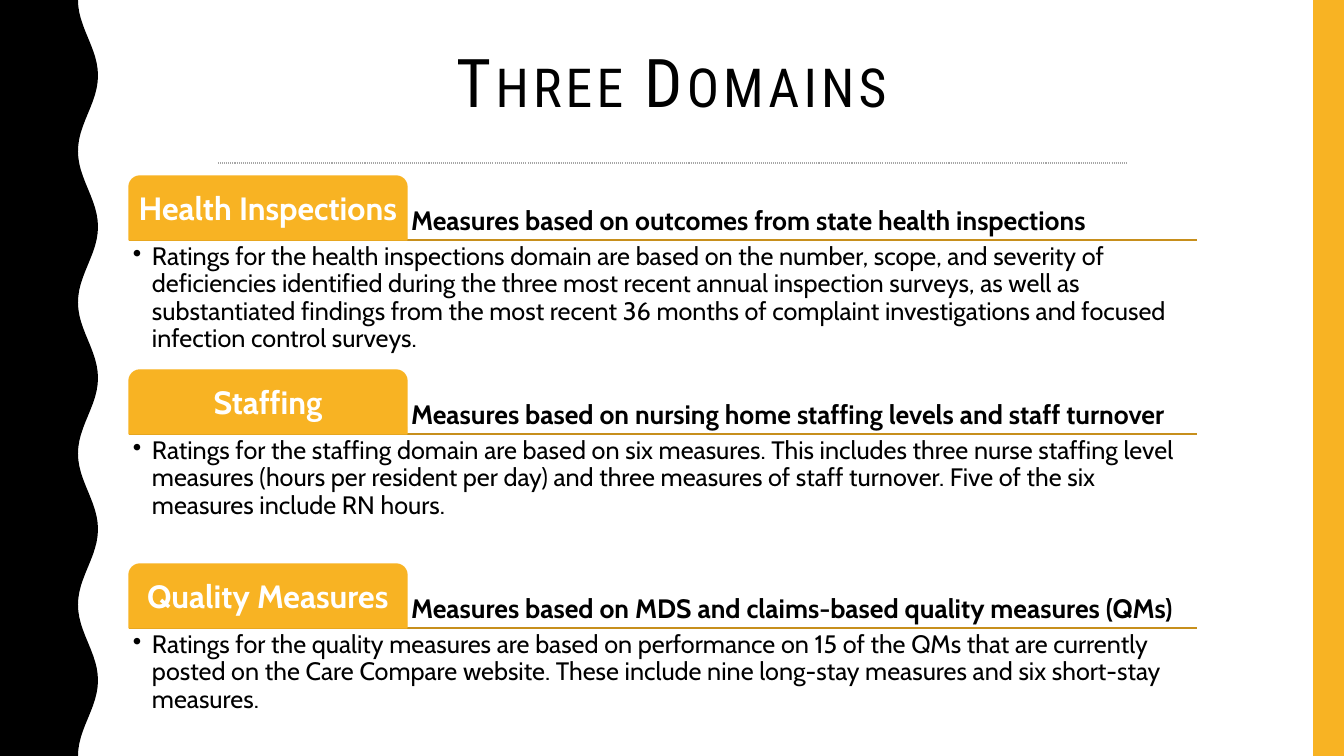
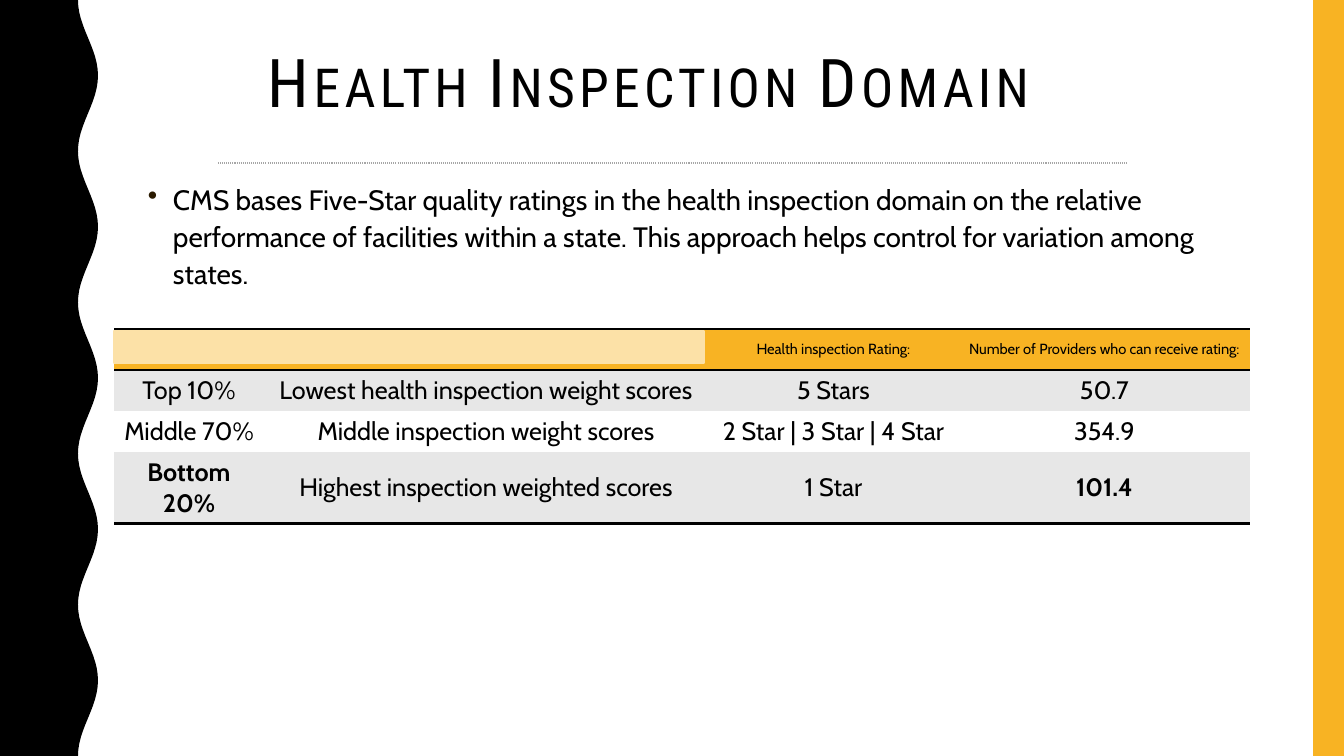
"""Build two slides on the domains behind nursing home star ratings."""
import dataclasses
import math
import typing

import pptx
import pptx.dml.color
import pptx.enum.dml
import pptx.enum.shapes
import pptx.enum.text
import pptx.oxml
import pptx.oxml.ns
import pptx.util

EMU_PER_PX = 63500 / 7
PAGE_WIDTH, PAGE_HEIGHT = 1344, 756
COLORS = {
    "black": "000000",
    "white": "FFFFFF",
    "gold": "F8B323",
    "pale gold": "FCE1A7",
    "dark gold": "C78F1C",
    "bullet": "2A1A00",
    "band": "E7E7E7",
    "dots": "A6A6A6",
}
TITLE_FONT, BODY_FONT = "Roboto Condensed", "Cabin"
PLAIN_TABLE_STYLE = "{2D5ABB26-0587-4C30-8999-92F81FD0307C}"
ALIGN = pptx.enum.text.PP_ALIGN
ANCHOR = pptx.enum.text.MSO_ANCHOR
SHAPE = pptx.enum.shapes.MSO_SHAPE


@dataclasses.dataclass(frozen=True)
class Area:
    """A rectangle in px."""

    left: int
    top: int
    width: int
    height: int

    def emu(self) -> tuple[int, ...]:
        """Return the rectangle in EMU."""
        return tuple(px(side) for side in dataclasses.astuple(self))


@dataclasses.dataclass(frozen=True)
class Style:
    """The look of a paragraph."""

    size: float
    color: str = "black"
    bold: bool = False
    align: typing.Any = ALIGN.LEFT
    spacing: float = 0.9
    font: str = BODY_FONT


@dataclasses.dataclass(frozen=True)
class Domain:
    """One rating domain with its tab, heading and detail."""

    name: str
    heading: str
    detail: str


@dataclasses.dataclass(frozen=True)
class RatingRow:
    """One row of the rating table."""

    cells: tuple[str, ...]
    fill: str
    size: float = 18
    bold_columns: tuple[int, ...] = ()
    borders: tuple[str, ...] = ()


TITLE_STYLE = Style(48, align=ALIGN.CENTER, font=TITLE_FONT)
TAB_STYLE = Style(23, "white", True, ALIGN.CENTER)
HEADING_STYLE = Style(19, bold=True)
DETAIL_STYLE = Style(18)
INTRO_STYLE = Style(20, spacing=1.1)

DOMAINS = (
    Domain(
        "Health Inspections",
        "Measures based on outcomes from state health inspections",
        "Ratings for the health inspections domain are based on the number, scope, and "
        "severity of deficiencies identified during the three most recent annual inspection "
        "surveys, as well as substantiated findings from the most recent 36 months of "
        "complaint investigations and focused infection control surveys.",
    ),
    Domain(
        "Staffing",
        "Measures based on nursing home staffing levels and staff turnover",
        "Ratings for the staffing domain are based on six measures. This includes three nurse "
        "staffing level measures (hours per resident per day) and three measures of staff "
        "turnover. Five of the six measures include RN hours.",
    ),
    Domain(
        "Quality Measures",
        "Measures based on MDS and claims-based quality measures (QMs)",
        "Ratings for the quality measures are based on performance on 15 of the QMs that are "
        "currently posted on the Care Compare website. These include nine long-stay measures "
        "and six short-stay measures.",
    ),
)
INTRO = (
    "CMS bases Five-Star quality ratings in the health inspection domain on the relative "
    "performance of facilities within a state. This approach helps control for variation "
    "among states."
)
RATING_COLUMNS = (150, 444, 251, 291)
RATING_ROW_HEIGHT = 41
RATING_ROWS = (
    RatingRow(
        ("", "", "Health inspection Rating:", "Number of Providers who can receive rating:"),
        "gold", 10.5, borders=("a:lnT", "a:lnB"),
    ),
    RatingRow(("Top 10%", "Lowest health inspection weight scores", "5 Stars", "50.7"), "band"),
    RatingRow(
        ("Middle 70%", "Middle inspection weight scores", "2 Star | 3 Star | 4 Star", "354.9"),
        "white",
    ),
    RatingRow(
        ("Bottom 20%", "Highest inspection weighted scores", "1 Star", "101.4"),
        "band", bold_columns=(0, 3), borders=("a:lnB",),
    ),
)


def px(length: float) -> int:
    """Turn px into EMU."""
    return round(length * EMU_PER_PX)


def rgb(name: str) -> pptx.dml.color.RGBColor:
    """Look up a colour by name."""
    return pptx.dml.color.RGBColor.from_string(COLORS[name])


def add_element(parent: typing.Any, tag: str, **attributes: str) -> typing.Any:
    """Append an XML element and return it."""
    element = pptx.oxml.parse_xml(f"<{tag} {pptx.oxml.ns.nsdecls('a')}/>")
    for key, value in attributes.items():
        element.set(key, value)
    parent.append(element)
    return element


def write(para: typing.Any, text: str, style: Style) -> typing.Any:
    """Add one styled run to a paragraph."""
    para.alignment = style.align
    para.line_spacing = style.spacing
    span = para.add_run()
    span.text = text
    span.font.name = style.font
    span.font.size = pptx.util.Pt(style.size)
    span.font.bold = style.bold
    span.font.color.rgb = rgb(style.color)
    return span


def set_bullet(para: typing.Any, indent: int, color: str) -> None:
    """Give a paragraph a hanging round bullet."""
    properties = para._p.get_or_add_pPr()
    properties.set("marL", str(px(indent)))
    properties.set("indent", str(-px(indent)))
    add_element(add_element(properties, "a:buClr"), "a:srgbClr", val=COLORS[color])
    add_element(properties, "a:buChar", char="•")


def set_frame(frame: typing.Any, anchor: typing.Any, across: int, down: int) -> None:
    """Set wrapping, anchor and insets of a text frame."""
    frame.word_wrap = True
    frame.auto_size = pptx.enum.text.MSO_AUTO_SIZE.NONE
    frame.vertical_anchor = anchor
    frame.margin_left = frame.margin_right = px(across)
    frame.margin_top = frame.margin_bottom = px(down)


def add_text(page: typing.Any, area: Area, text: str, style: Style,
             anchor: typing.Any = ANCHOR.TOP, insets: tuple[int, int] = (4, 4),
             bullet: tuple[int, str] | None = None) -> None:
    """Add a text box with one paragraph."""
    box = page.shapes.add_textbox(*area.emu())
    set_frame(box.text_frame, anchor, *insets)
    para = box.text_frame.paragraphs[0]
    if bullet:
        set_bullet(para, *bullet)
    write(para, text, style)


def paint(shape: typing.Any, fill: str, outline: bool = False) -> None:
    """Fill a shape flat, with an outline of the same colour if wanted."""
    shape.shadow.inherit = False
    shape.fill.solid()
    shape.fill.fore_color.rgb = rgb(fill)
    if outline:
        shape.line.color.rgb = rgb(fill)
        shape.line.width = pptx.util.Pt(1)
    else:
        shape.line.fill.background()


def add_rule(page: typing.Any, left: int, right: int, top: int, color: str,
             width: float, dash: typing.Any = None) -> None:
    """Draw a horizontal line."""
    rule = page.shapes.add_connector(
        pptx.enum.shapes.MSO_CONNECTOR.STRAIGHT, px(left), px(top), px(right), px(top))
    rule.line.color.rgb = rgb(color)
    rule.line.width = pptx.util.Pt(width)
    if dash is not None:
        rule.line.dash_style = dash
    add_element(rule.element.spPr, "a:effectLst")


def add_wave(page: typing.Any) -> None:
    """Draw the black band with a wavy right edge."""
    middle, swing, waves, steps = 88, 10, 5, 120
    edge = [
        (px(middle - swing * math.cos(math.tau * waves * step / steps)),
         px(PAGE_HEIGHT * step / steps))
        for step in range(steps + 1)
    ]
    builder = page.shapes.build_freeform(0, 0)
    builder.add_line_segments([*edge, (0, px(PAGE_HEIGHT))], close=True)
    paint(builder.convert_to_shape(), "black")


def add_page(deck: typing.Any, title: str) -> typing.Any:
    """Add a slide with the shared frame and title."""
    page = deck.slides.add_slide(deck.slide_layouts.get_by_name("Title Only"))
    add_wave(page)
    side = Area(1313, 0, PAGE_WIDTH - 1313, PAGE_HEIGHT)
    paint(page.shapes.add_shape(SHAPE.RECTANGLE, *side.emu()), "gold")
    add_rule(page, 218, 1126, 163, "dots", 0.75, pptx.enum.dml.MSO_LINE.ROUND_DOT)
    box = page.shapes.title
    box.left, box.top, box.width, box.height = Area(138, 19, 1122, 133).emu()
    set_frame(box.text_frame, ANCHOR.MIDDLE, 10, 5)
    span = write(box.text_frame.paragraphs[0], title, TITLE_STYLE)
    properties = span._r.get_or_add_rPr()
    properties.set("cap", "small")
    properties.set("spc", "300")
    return page


def add_domain(page: typing.Any, domain: Domain, top: int) -> None:
    """Draw one domain: rule, heading, tab and detail."""
    left, right, tab_width, tab_height = 129, 1197, 278, 64
    base = top + tab_height
    add_rule(page, left, right, base, "dark gold", 1)
    heading = Area(left + tab_width, top, right - left - tab_width, tab_height)
    add_text(page, heading, domain.heading, HEADING_STYLE, ANCHOR.BOTTOM)
    tab = page.shapes.add_shape(
        SHAPE.ROUND_2_SAME_RECTANGLE, *Area(left, top, tab_width, tab_height).emu())
    tab.adjustments[0], tab.adjustments[1] = 0.17, 0
    paint(tab, "gold", outline=True)
    set_frame(tab.text_frame, ANCHOR.MIDDLE, 5, 5)
    write(tab.text_frame.paragraphs[0], domain.name, TAB_STYLE)
    add_text(page, Area(left, base, right - left, 127), domain.detail, DETAIL_STYLE,
             bullet=(19, "black"))


def add_rating_table(page: typing.Any, left: int, top: int) -> None:
    """Draw the table of ratings."""
    area = Area(left, top, sum(RATING_COLUMNS), RATING_ROW_HEIGHT * len(RATING_ROWS))
    holder = page.shapes.add_table(len(RATING_ROWS), len(RATING_COLUMNS), *area.emu())
    for style_id in holder.element.iter(pptx.oxml.ns.qn("a:tableStyleId")):
        style_id.text = PLAIN_TABLE_STYLE
    table = holder.table
    table.first_row = table.horz_banding = False
    for column, width in zip(table.columns, RATING_COLUMNS):
        column.width = px(width)
    for line, row in zip(table.rows, RATING_ROWS):
        line.height = px(RATING_ROW_HEIGHT)
        for index, (cell, text) in enumerate(zip(line.cells, row.cells)):
            for tag in row.borders:
                border = add_element(cell._tc.get_or_add_tcPr(), tag,
                                     w=str(pptx.util.Pt(2)))
                add_element(add_element(border, "a:solidFill"), "a:srgbClr",
                            val=COLORS["black"])
            cell.fill.solid()
            cell.fill.fore_color.rgb = rgb(row.fill)
            cell.vertical_anchor = ANCHOR.MIDDLE
            if text:
                style = Style(row.size, bold=index in row.bold_columns,
                              align=ALIGN.CENTER, spacing=1.0)
                write(cell.text_frame.paragraphs[0], text, style)


def main() -> None:
    """Build and save the deck."""
    deck = pptx.Presentation()
    deck.slide_width, deck.slide_height = px(PAGE_WIDTH), px(PAGE_HEIGHT)

    page = add_page(deck, "Three Domains")
    for index, domain in enumerate(DOMAINS):
        add_domain(page, domain, 176 + 194 * index)

    page = add_page(deck, "Health Inspection Domain")
    add_text(page, Area(138, 174, 1122, 474), INTRO, INTRO_STYLE, insets=(10, 5),
             bullet=(25, "bullet"))
    add_rating_table(page, 114, 329)
    cover = page.shapes.add_shape(SHAPE.RECTANGLE, *Area(114, 331, 590, 32).emu())
    paint(cover, "pale gold", outline=True)

    deck.save("out.pptx")


if __name__ == "__main__":
    main()
